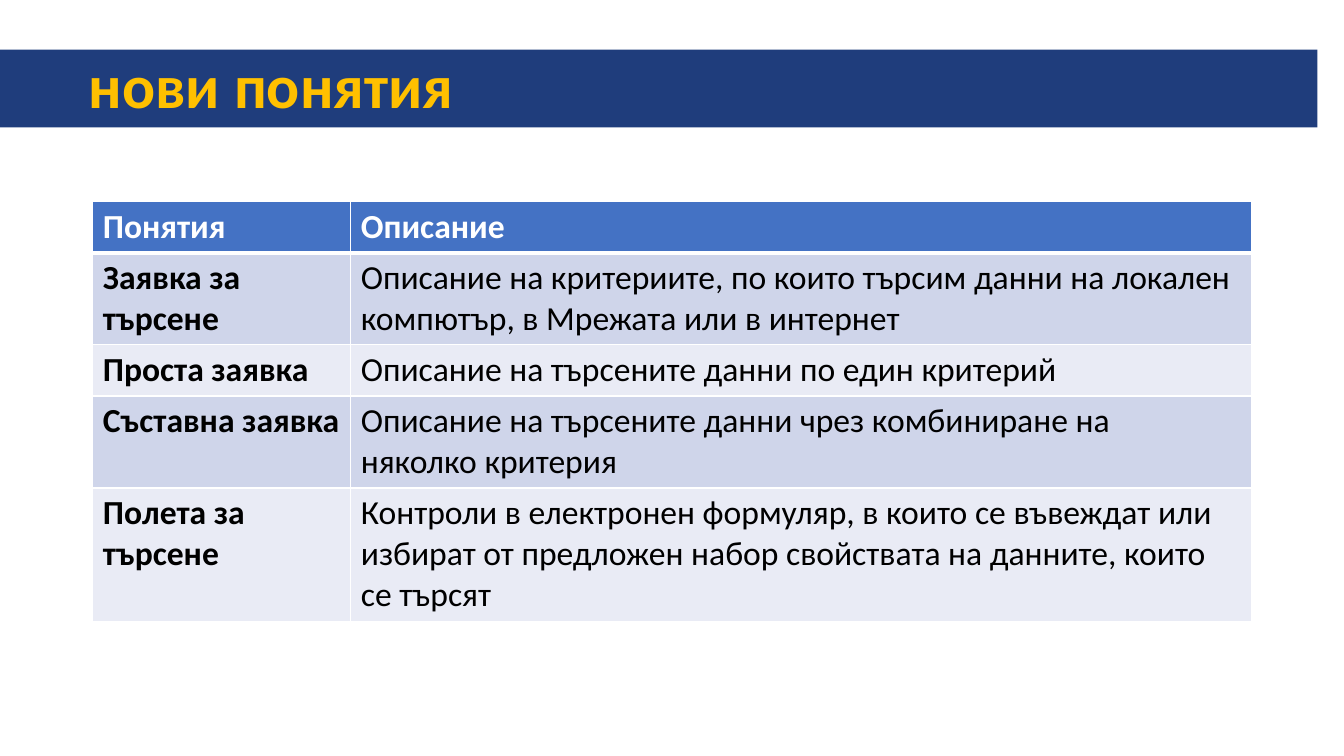
"""Build the slide of new search terms: a title bar above a table of definitions."""
from lxml.etree import SubElement as Sub
from pptx import Presentation
from pptx.dml.color import RGBColor as RGB
from pptx.enum.shapes import MSO_SHAPE as Shape
from pptx.enum.text import MSO_ANCHOR as Anchor, PP_ALIGN as Align
from pptx.oxml.ns import qn
from pptx.util import Cm, Pt

HUES = {"navy": "1F3D7C", "gold": "FFC000", "blue": "4472C4", "dark": "CFD5EA",
        "light": "E9EBF5", "white": "FFFFFF", "black": "000000"}
TERMS = [
    ("Понятия", ["Описание"], 1),
    ("Заявка за търсене", ["Описание на критериите, по които търсим данни на локален "
                           "компютър, в Мрежата или в интернет"], 2),
    ("Проста заявка", ["Описание на търсените данни по един критерий"], 1),
    ("Съставна заявка", ["Описание на търсените данни чрез комбиниране на",
                         "няколко критерия"], 2),
    ("Полета за търсене", ["Контроли в електронен формуляр, в които се въвеждат или "
                           "избират от предложен набор свойствата на данните, които "
                           "се търсят"], 3),
]


def add_run(para, text, size, hue, bold=True):
    run = para.add_run()
    run.text = text
    run.font.name = "Calibri"
    run.font.size = Pt(size)
    run.font.bold = bold
    run.font.color.rgb = RGB.from_string(HUES[hue])


def add_edge(cell, side, place, width):
    props = cell._tc.get_or_add_tcPr()
    line = Sub(props, qn(f"a:ln{side}"), w=str(Pt(width)))
    fill = Sub(line, qn("a:solidFill"))
    Sub(fill, qn("a:srgbClr"), val=HUES["white"])
    props.insert(place, line)


deck = Presentation()
deck.slide_width, deck.slide_height = Cm(33.87), Cm(19.05)
slide = deck.slides.add_slide(deck.slide_layouts[6])

bar = slide.shapes.add_shape(Shape.RECTANGLE, 0, Cm(1.25), Cm(33.2), Cm(1.96))
bar.shadow.inherit = False
bar.fill.solid()
bar.fill.fore_color.rgb = RGB.from_string(HUES["navy"])
bar.line.fill.background()
frame = bar.text_frame
frame.word_wrap = True
frame.vertical_anchor = Anchor.MIDDLE
frame.margin_left = Cm(2.24)
title = frame.paragraphs[0]
title.alignment = Align.LEFT
title.line_spacing = 0.9
add_run(title, "нови понятия", 44, "gold")

highs = [Cm(0.25 + 1.03 * lines) for *_, lines in TERMS]
grid = slide.shapes.add_table(len(TERMS), 2, Cm(2.34), Cm(5.08), Cm(29.2), sum(highs)).table
grid.columns[0].width, grid.columns[1].width = Cm(6.5), Cm(22.7)

for row, (term, about, lines) in enumerate(TERMS):
    grid.rows[row].height = highs[row]
    head = row == 0
    back = "blue" if head else "dark" if row % 2 else "light"
    for col, texts in enumerate([[term], about]):
        cell = grid.cell(row, col)
        cell.fill.solid()
        cell.fill.fore_color.rgb = RGB.from_string(HUES[back])
        for place, side in enumerate("LRTB"):
            thick = (row, side) in [(0, "B"), (1, "T")]
            add_edge(cell, side, place, 3 if thick else 1)
        for n, text in enumerate(texts):
            body = cell.text_frame
            para = body.add_paragraph() if n else body.paragraphs[0]
            add_run(para, text, 24, "white" if head else "black", head or col == 0)

deck.save("out.pptx")
